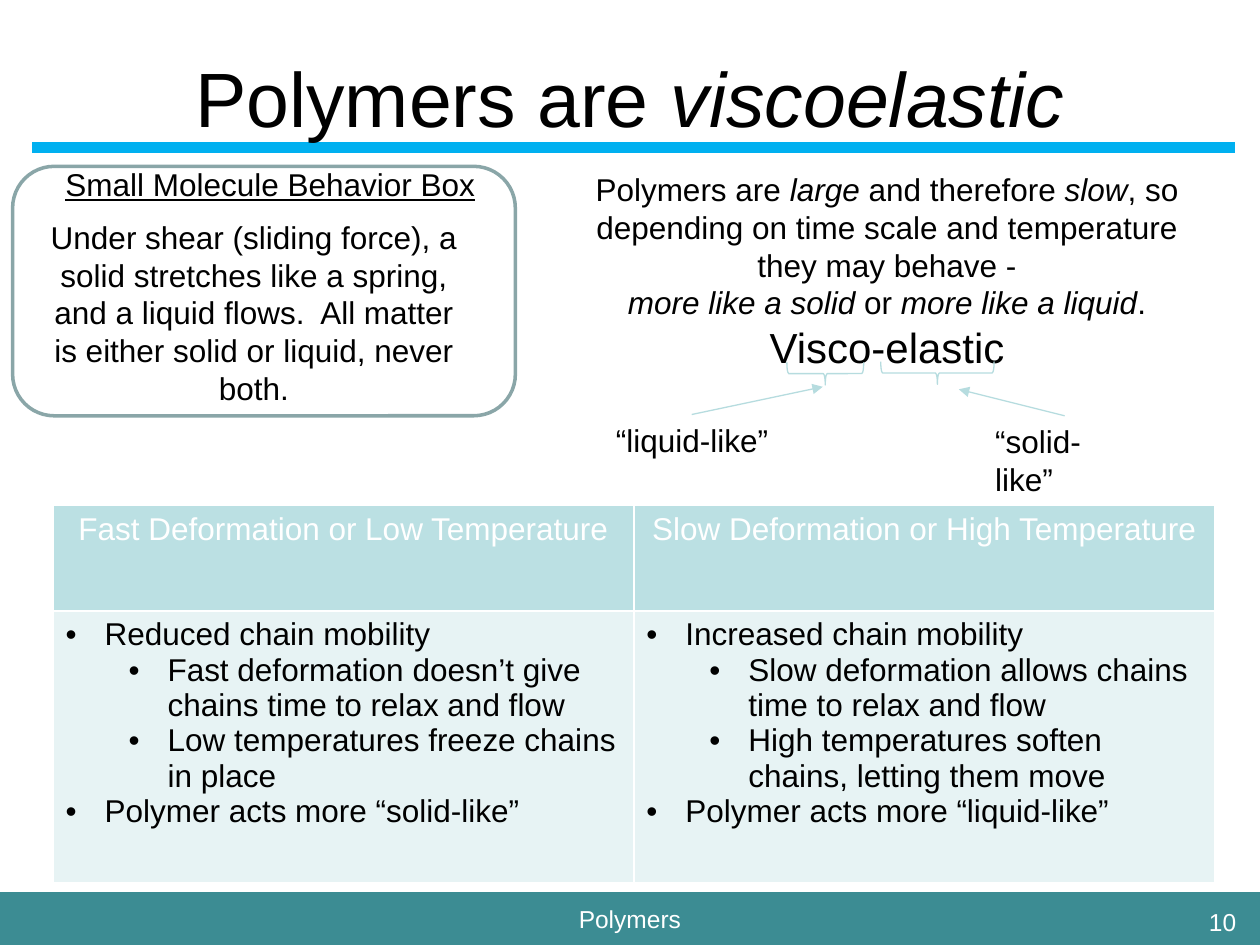
from lxml import etree
from pptx import Presentation
from pptx.dml.color import RGBColor
from pptx.enum.shapes import MSO_CONNECTOR, MSO_SHAPE
from pptx.enum.text import MSO_ANCHOR, PP_ALIGN
from pptx.oxml.ns import qn
from pptx.util import Inches, Pt

FONT = "Arial"
BLACK, WHITE = "000000", "FFFFFF"
TEAL, SKY, GREY, PALE = "3C8C93", "00B0F0", "8AA6A8", "B6DCDF"
HEADER_FILL, BODY_FILL = "BBE0E3", "E7F3F4"
CENTER, LEFT, RIGHT = PP_ALIGN.CENTER, PP_ALIGN.LEFT, PP_ALIGN.RIGHT

# A paragraph is a list of pieces; every second piece is italic.
TITLE = [["Polymers are ", "viscoelastic"]]
SMALL_MOLECULES = [["Under shear (sliding force), a solid stretches like a spring, and a "
                    "liquid flows.  All matter is either solid or liquid, never both."]]
POLYMERS = [
    ["Polymers are ", "large", " and therefore ", "slow",
     ", so depending on time scale and temperature they may behave -"],
    ["", "more like a solid", " or ", "more like a liquid", "."],
    ["Visco-elastic"],
]
BRACES = [(6.46, 2.66, 0.18, 0.61), (7.35, 2.51, 0.18, 0.9)]
ARROWS = [(5.49, 3.29, 6.53, 3.07), (8.45, 3.3, 7.61, 3.09)]
COLUMNS = [
    ("Fast Deformation or Low Temperature", [
        (0, "Reduced chain mobility"),
        (1, "Fast deformation doesn’t give chains time to relax and flow"),
        (1, "Low temperatures freeze chains in place"),
        (0, "Polymer acts more “solid-like”")]),
    ("Slow Deformation or High Temperature", [
        (0, "Increased chain mobility"),
        (1, "Slow deformation allows chains time to relax and flow"),
        (1, "High temperatures soften chains, letting them move"),
        (0, "Polymer acts more “liquid-like”")]),
]
ROW_HEIGHTS = [0.84, 2.16]
COLUMN_WIDTH = 4.61


def rgb(value):
    return RGBColor.from_string(value)


def style(font, size, color=BLACK):
    font.name, font.size = FONT, Pt(size)
    font.color.rgb = rgb(color)


def add_text(slide, box, paragraphs, size=18, color=BLACK, align=CENTER,
             anchor=MSO_ANCHOR.TOP, wrap=True):
    shape = slide.shapes.add_textbox(*map(Inches, box))
    frame = shape.text_frame
    frame.word_wrap, frame.vertical_anchor = wrap, anchor
    for number, pieces in enumerate(paragraphs):
        paragraph = frame.add_paragraph() if number else frame.paragraphs[0]
        paragraph.alignment = align
        for index, piece in enumerate(pieces):
            if piece:
                run = paragraph.add_run()
                run.text = piece
                style(run.font, size, color)
                run.font.italic = index % 2 == 1
    return frame


def add_outline(slide, kind, box, color, width):
    shape = slide.shapes.add_shape(kind, *map(Inches, box))
    shape.shadow.inherit = False
    shape.fill.background()
    shape.line.color.rgb, shape.line.width = rgb(color), Pt(width)
    return shape


def add_line(slide, ends, color, width, arrow=False):
    line = slide.shapes.add_connector(MSO_CONNECTOR.STRAIGHT, *map(Inches, ends))
    line.line.color.rgb, line.line.width = rgb(color), Pt(width)
    properties = line._element.spPr
    if arrow:
        etree.SubElement(properties.find(qn("a:ln")), qn("a:tailEnd"), type="triangle")
    etree.SubElement(properties, qn("a:effectLst"))


def set_bullet(paragraph, level):
    properties = paragraph._p.get_or_add_pPr()
    properties.set("marL", str(Inches(0.31 + 0.5 * level)))
    properties.set("indent", str(Inches(-0.31)))
    etree.SubElement(properties, qn("a:buFont"), typeface=FONT)
    etree.SubElement(properties, qn("a:buChar"), char="•")
    paragraph.level = level


def set_cell(cell, fill):
    """Fill the cell and give it thin white borders."""
    cell.fill.solid()
    cell.fill.fore_color.rgb = rgb(fill)
    properties = cell._tc.get_or_add_tcPr()
    for position, side in enumerate("LRTB"):
        border = etree.Element(qn(f"a:ln{side}"), w=str(Pt(1)))
        solid = etree.SubElement(border, qn("a:solidFill"))
        etree.SubElement(solid, qn("a:srgbClr"), val=WHITE)
        properties.insert(position, border)


def add_comparison(slide):
    frame = slide.shapes.add_table(
        2, len(COLUMNS), Inches(0.42), Inches(4.01),
        Inches(COLUMN_WIDTH * len(COLUMNS)), Inches(sum(ROW_HEIGHTS)))
    table = frame.table
    for row, height in zip(table.rows, ROW_HEIGHTS):
        row.height = Inches(height)
    for index, (heading, bullets) in enumerate(COLUMNS):
        table.columns[index].width = Inches(COLUMN_WIDTH)
        header, body = table.cell(0, index), table.cell(1, index)
        set_cell(header, HEADER_FILL)
        set_cell(body, BODY_FILL)
        header.text_frame.text = heading
        paragraph = header.text_frame.paragraphs[0]
        paragraph.alignment = CENTER
        style(paragraph.runs[0].font, 18, WHITE)
        body.text_frame.text = "\n".join(text for _, text in bullets)
        for paragraph, (level, _) in zip(body.text_frame.paragraphs, bullets):
            set_bullet(paragraph, level)
            style(paragraph.runs[0].font, 18)


def main():
    presentation = Presentation()
    presentation.slide_width, presentation.slide_height = Inches(10), Inches(7.5)
    slide = presentation.slides.add_slide(presentation.slide_layouts[6])

    footer = slide.shapes.add_shape(
        MSO_SHAPE.RECTANGLE, *map(Inches, (0, 7.08, 10, 0.42)))
    footer.shadow.inherit = False
    footer.fill.solid()
    footer.fill.fore_color.rgb = rgb(TEAL)
    footer.line.fill.background()
    footer.text_frame.text = "Polymers"
    footer.text_frame.vertical_anchor = MSO_ANCHOR.MIDDLE
    paragraph = footer.text_frame.paragraphs[0]
    paragraph.alignment = CENTER
    style(paragraph.runs[0].font, 14, WHITE)

    add_line(slide, (9.8, 1.17, 0.25, 1.17), SKY, 6)
    add_text(slide, (0.69, 0.4, 8.62, 0.73), TITLE, 44, anchor=MSO_ANCHOR.MIDDLE)

    add_outline(slide, MSO_SHAPE.ROUNDED_RECTANGLE, (0.1, 1.32, 3.99, 1.98), GREY, 2)
    heading = add_text(slide, (0.42, 1.26, 3.69, 0.36),
                       [["Small Molecule Behavior Box"]], align=LEFT, wrap=False)
    heading.paragraphs[0].runs[0].font.underline = True
    add_text(slide, (0.28, 1.68, 3.47, 1.62), SMALL_MOLECULES)

    polymers = add_text(slide, (4.44, 1.3, 5.2, 1.72), POLYMERS)
    polymers.paragraphs[-1].runs[0].font.size = Pt(24)
    for box in BRACES:
        brace = add_outline(slide, MSO_SHAPE.LEFT_BRACE, box, PALE, 0.75)
        brace.rotation = 270
    add_text(slide, (4.79, 3.29, 1.41, 0.4), [["“liquid-like”"]], align=LEFT, wrap=False)
    add_text(slide, (7.8, 3.3, 1.31, 0.4), [["“solid-like”"]], align=LEFT)
    for ends in ARROWS:
        add_line(slide, ends, PALE, 0.75, arrow=True)

    add_comparison(slide)
    add_text(slide, (9.08, 7.15, 0.83, 0.35), [["10"]], 14, WHITE, RIGHT)
    presentation.save("out.pptx")


if __name__ == "__main__":
    main()
